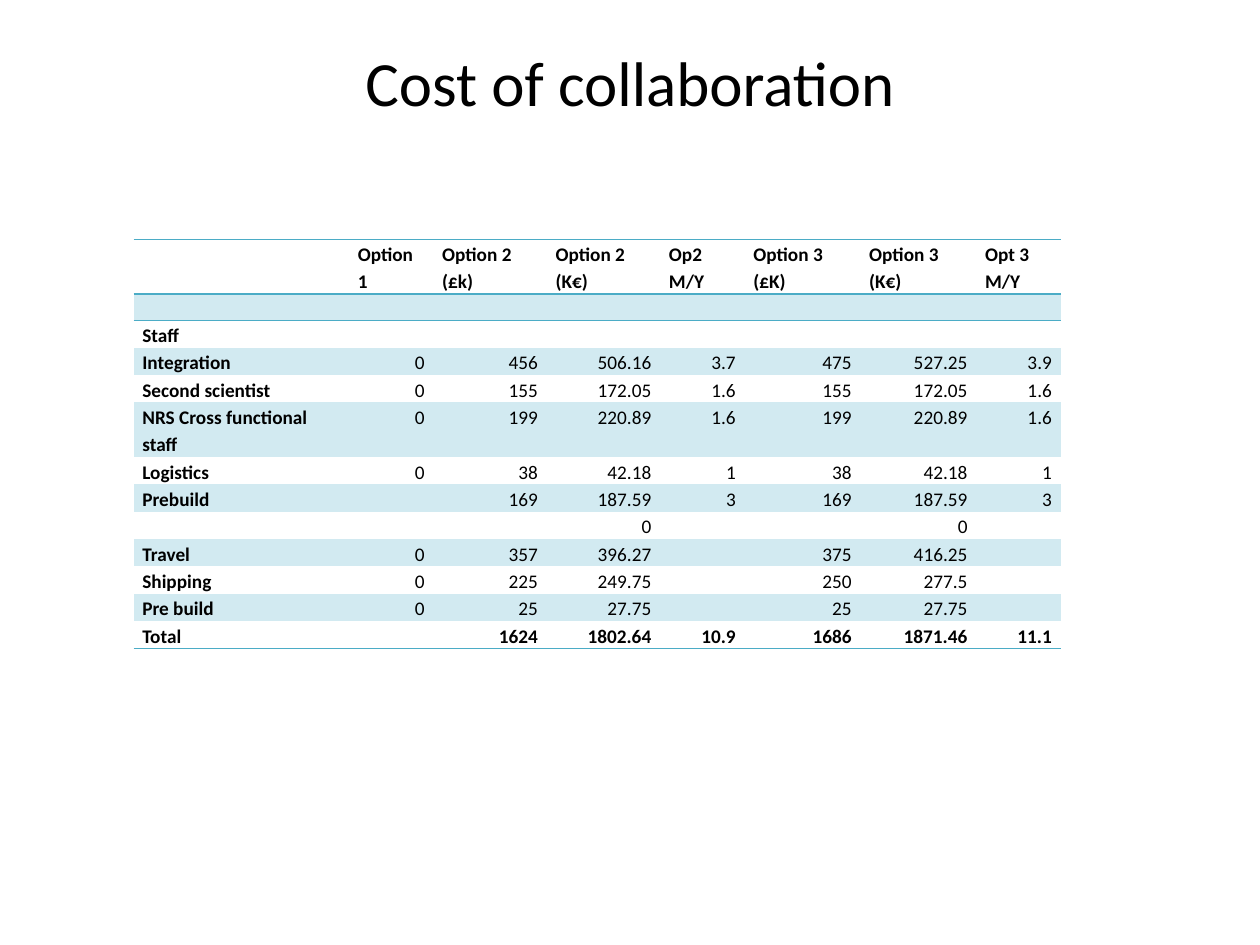
"""Build the cost of collaboration slide."""
from dataclasses import dataclass

from lxml import etree
from pptx import Presentation
from pptx import util as u
from pptx.dml.color import RGBColor
from pptx.enum import text
from pptx.oxml.ns import qn

COLORS = {"text": "000000", "band": "D2EAF1", "rule": "4BACC6"}
FONT = "Calibri"
NO_STYLE = "{2D5ABB26-0587-4C30-8999-92F81FD0307C}"
WIDTHS = [1.71, 0.67, 0.9, 0.9, 0.67, 0.92, 0.92, 0.67]
ROW_HEIGHT = 0.21


@dataclass
class CostRow:
    label: str = ""
    values: tuple = ("",) * 7
    bold: bool = False
    banded: bool = False
    rules: tuple = ()


ROWS = [
    CostRow("", ("Option 1", "Option 2 (£k)", "Option 2 (K€)", "Op2 M/Y",
                 "Option 3 (£K)", "Option 3 (K€)", "Opt 3 M/Y"),
            bold=True, rules=("lnT", "lnB")),
    CostRow(banded=True, rules=("lnT",)),
    CostRow("Staff"),
    CostRow("Integration", ("0", "456", "506.16", "3.7", "475", "527.25", "3.9"), banded=True),
    CostRow("Second scientist", ("0", "155", "172.05", "1.6", "155", "172.05", "1.6")),
    CostRow("NRS Cross functional staff",
            ("0", "199", "220.89", "1.6", "199", "220.89", "1.6"), banded=True),
    CostRow("Logistics", ("0", "38", "42.18", "1", "38", "42.18", "1")),
    CostRow("Prebuild", ("", "169", "187.59", "3", "169", "187.59", "3"), banded=True),
    CostRow("", ("", "", "0", "", "", "0", "")),
    CostRow("Travel", ("0", "357", "396.27", "", "375", "416.25", ""), banded=True),
    CostRow("Shipping", ("0", "225", "249.75", "", "250", "277.5", "")),
    CostRow("Pre build", ("0", "25", "27.75", "", "25", "27.75", ""), banded=True),
    CostRow("Total", ("", "1624", "1802.64", "10.9", "1686", "1871.46", "11.1"),
            bold=True, rules=("lnB",)),
]


def rgb(name: str) -> RGBColor:
    return RGBColor.from_string(COLORS[name])


def style_runs(p, size: float, bold: bool = False) -> None:
    for r in p.runs:
        r.font.name = FONT
        r.font.size = u.Pt(size)
        r.font.bold = bold
        r.font.color.rgb = rgb("text")


def add_rules(cell, sides: tuple) -> None:
    tc_pr = cell._tc.get_or_add_tcPr()
    for i, side in enumerate(sides):
        ln = etree.Element(qn(f"a:{side}"), w=str(u.Pt(1)))
        fill = etree.SubElement(ln, qn("a:solidFill"))
        etree.SubElement(fill, qn("a:srgbClr"), val=COLORS["rule"])
        tc_pr.insert(i, ln)


def fill_cell(cell, content: str, row: CostRow, bold: bool, align) -> None:
    cell.margin_left = cell.margin_right = u.Inches(0.07)
    cell.margin_top = cell.margin_bottom = 0
    if row.banded:
        cell.fill.solid()
        cell.fill.fore_color.rgb = rgb("band")
    else:
        cell.fill.background()
    add_rules(cell, row.rules)
    p = cell.text_frame.paragraphs[0]
    p.text = content
    p.alignment = align
    p.line_spacing = 1.15
    style_runs(p, 11, bold)
    if not content:
        end = etree.SubElement(p._p, qn("a:endParaRPr"), sz="1100")
        etree.SubElement(end, qn("a:latin"), typeface=FONT)


def add_cost_table(s) -> None:
    frame = s.shapes.add_table(len(ROWS), len(WIDTHS), u.Inches(1.06), u.Inches(1.9),
                               u.Inches(sum(WIDTHS)), u.Inches(ROW_HEIGHT * len(ROWS)))
    table = frame.table
    table.horz_banding = False
    frame._element.find(f".//{qn('a:tableStyleId')}").text = NO_STYLE
    for column, width in zip(table.columns, WIDTHS):
        column.width = u.Inches(width)
    for i, row in enumerate(ROWS):
        table.rows[i].height = u.Inches(ROW_HEIGHT)
        for j, content in enumerate((row.label, *row.values)):
            left = i == 0 or j == 0
            align = text.PP_ALIGN.LEFT if left else text.PP_ALIGN.RIGHT
            fill_cell(table.cell(i, j), content, row, row.bold or j == 0, align)


def add_title(s) -> None:
    sp = s.shapes.title
    sp.left, sp.top, sp.width, sp.height = map(u.Inches, (0, 0.21, 10, 0.87))
    tf = sp.text_frame
    tf.text = "Cost of collaboration"
    tf.vertical_anchor = text.MSO_ANCHOR.MIDDLE
    p = tf.paragraphs[0]
    p.alignment = text.PP_ALIGN.CENTER
    style_runs(p, 36)


def main() -> None:
    prs = Presentation()
    prs.slide_width, prs.slide_height = u.Inches(10), u.Inches(7.5)
    s = prs.slides.add_slide(prs.slide_layouts[5])
    add_title(s)
    add_cost_table(s)
    prs.save("out.pptx")


if __name__ == "__main__":
    main()
